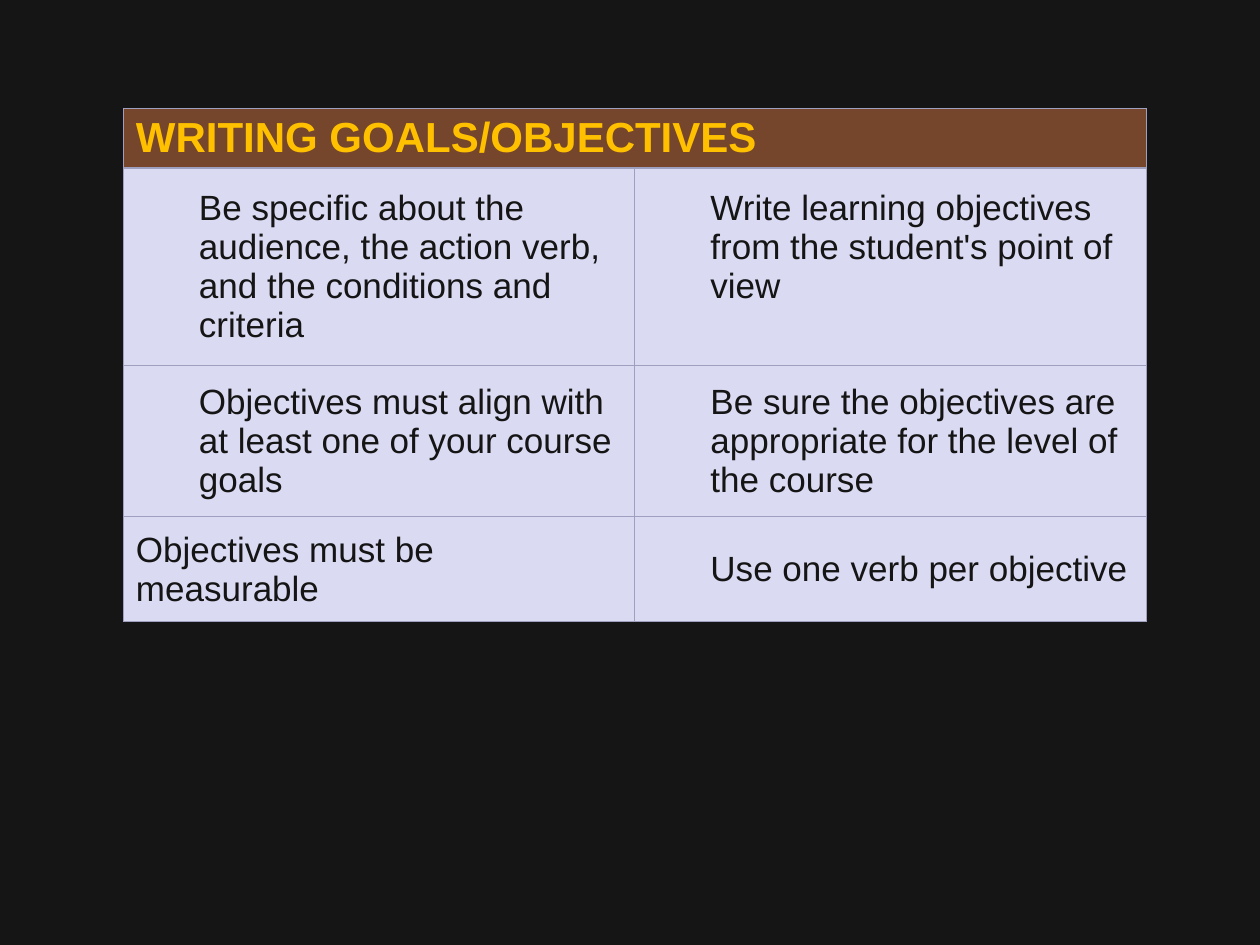
from dataclasses import dataclass

from lxml.etree import SubElement
from pptx import Presentation
from pptx.dml.color import RGBColor
from pptx.enum.text import MSO_ANCHOR
from pptx.oxml.ns import qn
from pptx.util import Pt


@dataclass(frozen=True)
class Theme:
    font: str = "Arial"
    background: str = "151515"
    heading_fill: str = "75452C"
    heading_text: str = "FFC000"
    guideline_fill: str = "DADAF3"
    guideline_text: str = "151515"
    border: str = "9FA0BF"
    border_width: float = 0.75
    heading_size: int = 24
    guideline_size: int = 20


THEME = Theme()
HEADING = "WRITING GOALS/OBJECTIVES"
INDENT = 36
LINE_HEIGHT = 22.5
INSET_X, INSET_Y = 7.2, 3.6

# Each guideline: text, left indent, lines kept free below
GUIDELINES = [
    [("Be specific about the audience, the action verb, and the conditions and criteria", INDENT, 0),
     ("Write learning objectives from the student's point of view", INDENT, 1)],
    [("Objectives must align with at least one of your course goals", INDENT, 0),
     ("Be sure the objectives are appropriate for the level of the course", INDENT, 0)],
    [("Objectives must be measurable", 0, 0),
     ("Use one verb per objective", INDENT, 0)],
]
ROW_HEIGHTS = [34, 113, 86.4, 60]


def add_borders(cell):
    properties = cell._tc.get_or_add_tcPr()
    for side in ("lnL", "lnR", "lnT", "lnB"):
        line = SubElement(properties, qn(f"a:{side}"), w=str(Pt(THEME.border_width)))
        fill = SubElement(line, qn("a:solidFill"))
        SubElement(fill, qn("a:srgbClr"), val=THEME.border)


def fill_cell(cell, text, fill, color, size, bold=False, indent=0, free_lines=0):
    add_borders(cell)
    cell.fill.solid()
    cell.fill.fore_color.rgb = RGBColor.from_string(fill)
    cell.vertical_anchor = MSO_ANCHOR.MIDDLE
    cell.margin_left = cell.margin_right = Pt(INSET_X)
    cell.margin_top = Pt(INSET_Y)
    cell.margin_bottom = Pt(INSET_Y + free_lines * LINE_HEIGHT)
    paragraph = cell.text_frame.paragraphs[0]
    paragraph.text = text
    if indent:
        paragraph.level = 1
        properties = paragraph._p.get_or_add_pPr()
        properties.set("marL", str(Pt(indent)))
        properties.set("indent", "0")
    font = paragraph.runs[0].font
    font.name = THEME.font
    font.size = Pt(size)
    font.bold = bold
    font.color.rgb = RGBColor.from_string(color)


def add_guidelines_table(slide, left, top, width):
    column_count = len(GUIDELINES[0])
    table = slide.shapes.add_table(
        len(ROW_HEIGHTS), column_count,
        Pt(left), Pt(top), Pt(width), Pt(sum(ROW_HEIGHTS))).table
    table.horz_banding = False
    for column in table.columns:
        column.width = Pt(width / column_count)
    for row, height in zip(table.rows, ROW_HEIGHTS):
        row.height = Pt(height)

    heading = table.cell(0, 0)
    heading.merge(table.cell(0, column_count - 1))
    fill_cell(heading, HEADING, THEME.heading_fill, THEME.heading_text,
              THEME.heading_size, bold=True)
    for column in range(1, column_count):
        add_borders(table.cell(0, column))

    for row, guidelines in enumerate(GUIDELINES, start=1):
        for column, (text, indent, free_lines) in enumerate(guidelines):
            fill_cell(table.cell(row, column), text, THEME.guideline_fill,
                      THEME.guideline_text, THEME.guideline_size,
                      indent=indent, free_lines=free_lines)


def main():
    presentation = Presentation()
    presentation.slide_width, presentation.slide_height = Pt(720), Pt(540)
    slide = presentation.slides.add_slide(presentation.slide_layouts[6])
    slide.background.fill.solid()
    slide.background.fill.fore_color.rgb = RGBColor.from_string(THEME.background)
    add_guidelines_table(slide, left=70.5, top=62, width=584.6)
    presentation.save("out.pptx")


if __name__ == "__main__":
    main()
